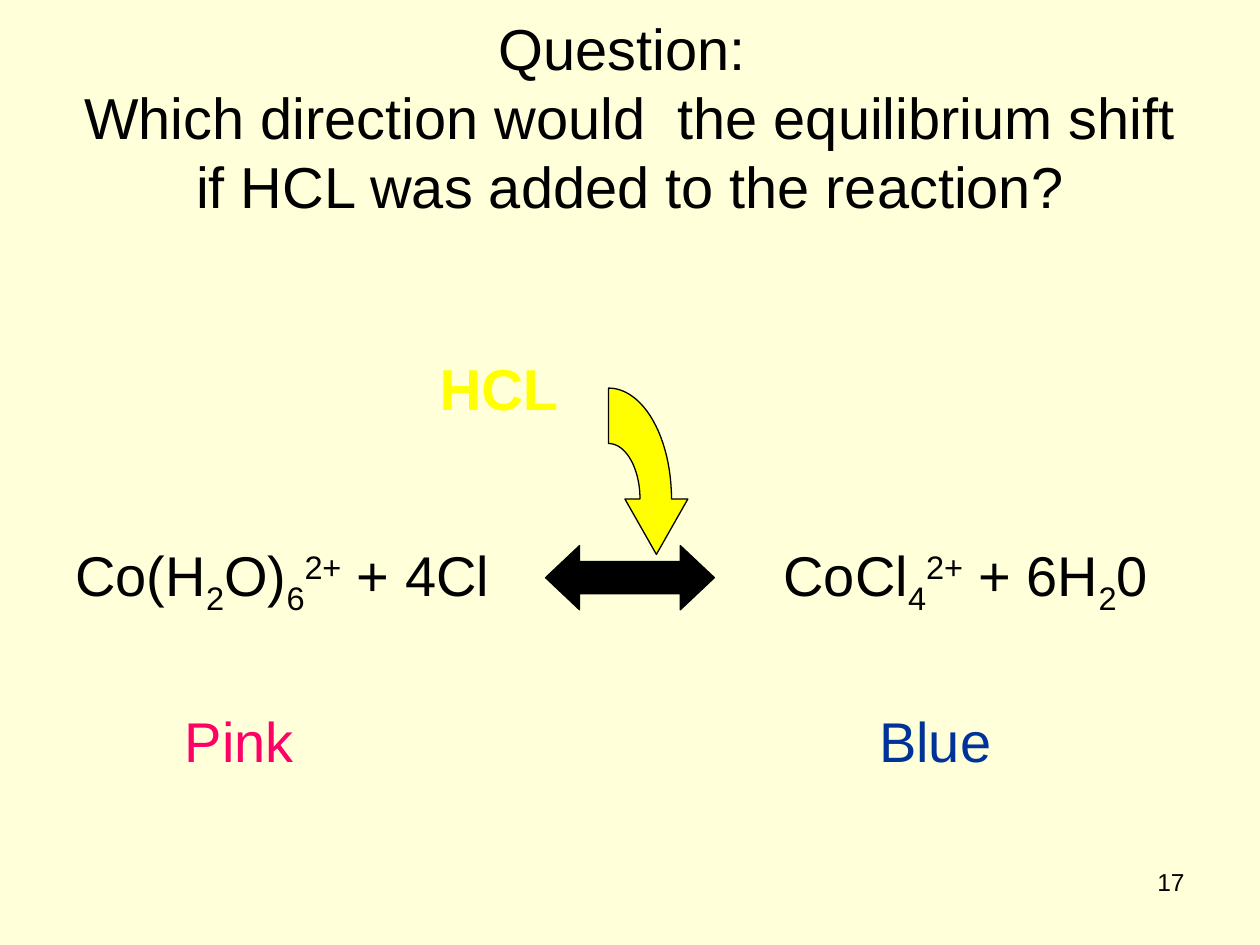
from dataclasses import dataclass
from math import cos, pi, sin

from pptx import Presentation
from pptx.dml.color import RGBColor
from pptx.enum.shapes import MSO_SHAPE
from pptx.enum.text import MSO_ANCHOR, MSO_AUTO_SIZE, PP_ALIGN
from pptx.util import Inches, Pt

LEFT, CENTER, RIGHT = PP_ALIGN.LEFT, PP_ALIGN.CENTER, PP_ALIGN.RIGHT
TITLE_ONLY = 5
SUB, SUP = -25, 30


@dataclass(frozen=True)
class Theme:
    font: str = "Arial"
    background: str = "FFFFD9"
    ink: str = "000000"
    acid: str = "FFFF00"
    pink: str = "FF0066"
    blue: str = "003399"
    title_size: int = 33
    body_size: int = 32
    number_size: int = 14
    outline: float = 0.75


THEME = Theme()


@dataclass(frozen=True)
class Run:
    text: str
    baseline: int = 0


@dataclass(frozen=True)
class Label:
    runs: tuple[Run, ...]
    left: float
    top: float
    width: float
    height: float
    size: int = THEME.body_size
    color: str = THEME.ink
    align: PP_ALIGN = LEFT
    bold: bool = False


LABELS = (
    Label((Run("Co(H"), Run("2", SUB), Run("O)"), Run("6", SUB),
           Run("2+", SUP), Run(" + 4Cl")), 0.5, 4.24, 3.7, 0.62),
    Label((Run("CoCl"), Run("4", SUB), Run("2+", SUP), Run(" + 6H"),
           Run("2", SUB), Run("0")), 6.12, 4.24, 3.38, 0.62),
    Label((Run("Pink"),), 1.37, 5.56, 1.4, 0.62, color=THEME.pink),
    Label((Run("Blue"),), 6.88, 5.56, 1.4, 0.62, color=THEME.blue),
    Label((Run("HCL"),), 3.17, 2.75, 1.58, 0.65, THEME.title_size,
          THEME.acid, CENTER, True),
    Label((Run("17"),), 7.17, 6.83, 2.33, 0.52, THEME.number_size,
          align=RIGHT),
)


def rgb(color: str) -> RGBColor:
    return RGBColor.from_string(color)


def add_run(p, run: Run, size: int, color: str, bold: bool = False) -> None:
    r = p.add_run()
    r.text = run.text
    r.font.name, r.font.size, r.font.bold = THEME.font, Pt(size), bold
    r.font.color.rgb = rgb(color)
    if run.baseline:
        r._r.get_or_add_rPr().set("baseline", str(run.baseline * 1000))


def add_label(s, label: Label) -> None:
    box = s.shapes.add_textbox(Inches(label.left), Inches(label.top),
                               Inches(label.width), Inches(label.height))
    tf = box.text_frame
    tf.word_wrap = True
    p = tf.paragraphs[0]
    p.alignment = label.align
    for run in label.runs:
        add_run(p, run, label.size, label.color, label.bold)


def set_title(s) -> None:
    title = s.shapes.title
    title.left, title.top = Inches(0.5), Inches(0.3)
    title.width, title.height = Inches(9), Inches(1.25)
    tf = title.text_frame
    tf.auto_size = MSO_AUTO_SIZE.NONE
    tf.vertical_anchor = MSO_ANCHOR.MIDDLE
    p = tf.paragraphs[0]
    p.alignment = CENTER
    add_run(p, Run("Question: "), THEME.title_size, THEME.ink)
    p.add_line_break()
    add_run(p, Run("Which direction would  the equilibrium shift "
                   "if HCL was added to the reaction?"),
            THEME.title_size, THEME.ink)


def style_shape(sp, color: str) -> None:
    sp.shadow.inherit = False
    sp.fill.solid()
    sp.fill.fore_color.rgb = rgb(color)
    sp.line.color.rgb = rgb(THEME.ink)
    sp.line.width = Pt(THEME.outline)


def quarter_arc(cx: float, cy: float, rx: float, ry: float,
                steps: int = 24) -> list[tuple[float, float]]:
    """Points from the top of an ellipse clockwise to its right end."""
    angles = [i * pi / 2 / steps for i in range(steps + 1)]
    return [(cx + rx * sin(a), cy - ry * cos(a)) for a in angles]


def add_curved_arrow(s) -> None:
    cx, cy = 4.83, 3.96
    outer = quarter_arc(cx, cy, 0.5, 0.88)
    inner = quarter_arc(cx, cy, 0.25, 0.44)
    head = [(5.46, cy), (5.21, 4.4), (4.96, cy)]
    points = [(Inches(x), Inches(y)) for x, y in outer + head + inner[::-1]]
    builder = s.shapes.build_freeform(*points[0])
    builder.add_line_segments(points[1:], close=True)
    style_shape(builder.convert_to_shape(), THEME.acid)


def add_equilibrium_arrow(s) -> None:
    sp = s.shapes.add_shape(MSO_SHAPE.LEFT_RIGHT_ARROW, Inches(4.33),
                            Inches(4.33), Inches(1.34), Inches(0.51))
    sp.adjustments[0], sp.adjustments[1] = 0.5, 0.53
    style_shape(sp, THEME.ink)


def main() -> None:
    prs = Presentation()
    prs.slide_width, prs.slide_height = Inches(10), Inches(7.5)
    s = prs.slides.add_slide(prs.slide_layouts[TITLE_ONLY])
    s.background.fill.solid()
    s.background.fill.fore_color.rgb = rgb(THEME.background)
    set_title(s)
    add_curved_arrow(s)
    for label in LABELS:
        add_label(s, label)
    add_equilibrium_arrow(s)
    prs.save("out.pptx")


if __name__ == "__main__":
    main()
